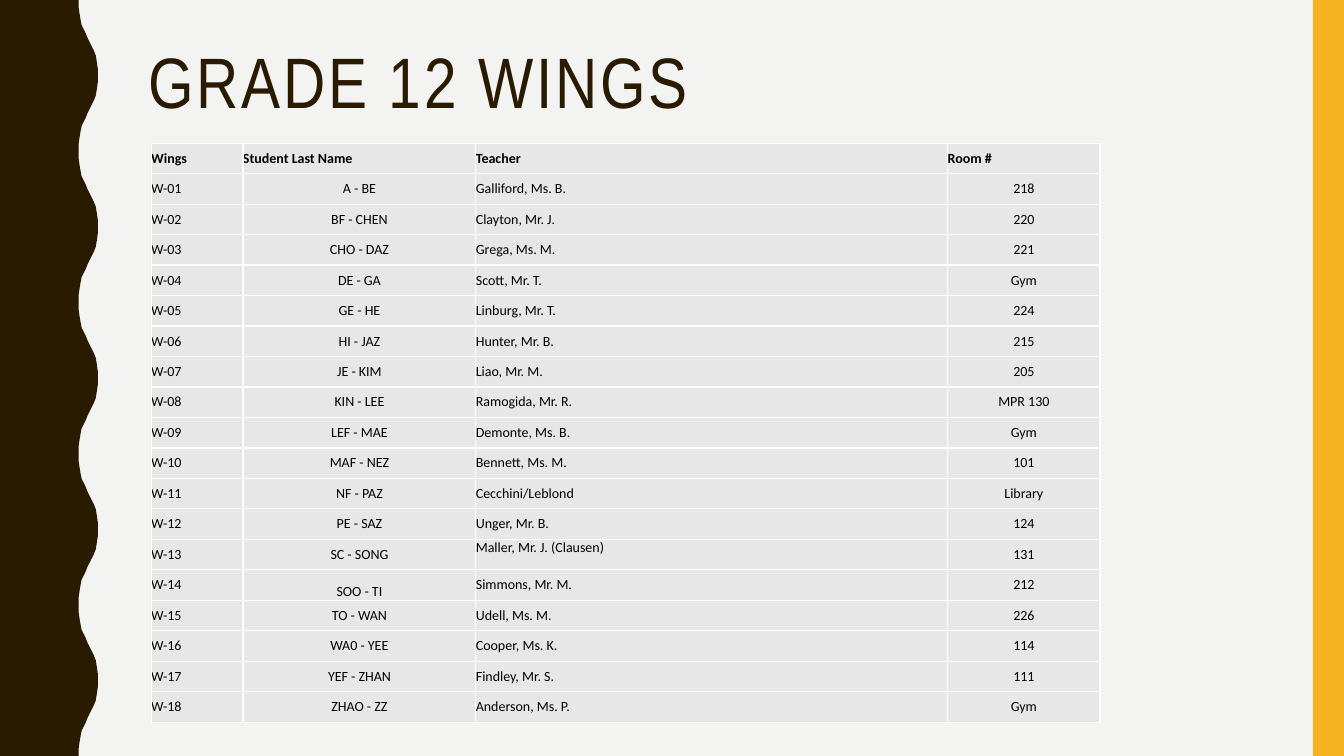
from dataclasses import dataclass

from lxml import etree
from pptx import Presentation
from pptx.dml.color import RGBColor
from pptx.enum.shapes import MSO_SHAPE
from pptx.enum.text import MSO_ANCHOR, PP_ALIGN
from pptx.oxml.ns import qn
from pptx.util import Inches, Pt

RECTANGLE = MSO_SHAPE.RECTANGLE
TOP, MIDDLE, BOTTOM = MSO_ANCHOR.TOP, MSO_ANCHOR.MIDDLE, MSO_ANCHOR.BOTTOM
LEFT, CENTER = PP_ALIGN.LEFT, PP_ALIGN.CENTER


@dataclass(frozen=True)
class Theme:
    background: str = "F3F3F2"
    dark: str = "2A1A00"
    accent: str = "F8B323"
    cell: str = "E7E7E7"
    border: str = "FFFFFF"
    text: str = "000000"
    title_font: str = "Arial Narrow"
    table_font: str = "Calibri"
    title_size: int = 51
    table_size: int = 10
    border_width: int = 1


THEME = Theme()
SLIDE_WIDTH, SLIDE_HEIGHT = 13.33, 7.5

# Half a wave, trough to crest; the other half mirrors it.
HALF_WAVE = [
    (0.78, 0), (0.78, 0.07), (0.79, 0.14), (0.8, 0.2), (0.81, 0.25),
    (0.83, 0.29), (0.85, 0.33), (0.87, 0.38), (0.89, 0.42), (0.91, 0.46),
    (0.93, 0.5), (0.95, 0.55), (0.96, 0.61), (0.97, 0.68), (0.97, 0.75),
]
WAVE_LENGTH = 1.5
WAVE_COUNT = 5

HEADINGS = ("Wings", "Student Last Name", "Teacher", "Room #")
WINGS = [
    ("A - BE", "Galliford, Ms. B.", "218"),
    ("BF - CHEN", "Clayton, Mr. J.", "220"),
    ("CHO - DAZ", "Grega, Ms. M.", "221"),
    ("DE - GA", "Scott, Mr. T.", "Gym"),
    ("GE - HE", "Linburg, Mr. T.", "224"),
    ("HI - JAZ", "Hunter, Mr. B.", "215"),
    ("JE - KIM", "Liao, Mr. M.", "205"),
    ("KIN - LEE", "Ramogida, Mr. R.", "MPR 130"),
    ("LEF - MAE", "Demonte, Ms. B.", "Gym"),
    ("MAF - NEZ", "Bennett, Ms. M.", "101"),
    ("NF - PAZ", "Cecchini/Leblond", "Library"),
    ("PE - SAZ", "Unger, Mr. B.", "124"),
    ("SC - SONG", "Maller, Mr. J. (Clausen)", "131"),
    ("SOO - TI", "Simmons, Mr. M.", "212"),
    ("TO - WAN", "Udell, Ms. M.", "226"),
    ("WA0 - YEE", "Cooper, Ms. K.", "114"),
    ("YEF - ZHAN", "Findley, Mr. S.", "111"),
    ("ZHAO - ZZ", "Anderson, Ms. P.", "Gym"),
]
COLUMN_WIDTHS = (0.91, 2.31, 4.68, 1.51)
COLUMN_ALIGNMENTS = (LEFT, CENTER, LEFT, CENTER)
TABLE_HEIGHT = 5.75
SPECIAL_ANCHORS = {(13, 2): TOP, (14, 1): BOTTOM}


def paint(shape, color):
    shape.shadow.inherit = False
    shape.fill.solid()
    shape.fill.fore_color.rgb = RGBColor.from_string(color)
    shape.line.fill.background()


def style_font(font, color, **format_values):
    font.color.rgb = RGBColor.from_string(color)
    for name, value in format_values.items():
        setattr(font, name, value)


def add_wavy_band(slide):
    mirrored = [(x, WAVE_LENGTH - y) for x, y in HALF_WAVE[-2::-1]]
    wave = HALF_WAVE + mirrored[:-1]
    edge = [(x, y + number * WAVE_LENGTH)
            for number in range(WAVE_COUNT) for x, y in wave]
    outline = edge + [(HALF_WAVE[0][0], SLIDE_HEIGHT), (0, SLIDE_HEIGHT)]
    builder = slide.shapes.build_freeform(0, 0)
    builder.add_line_segments([(Inches(x), Inches(y)) for x, y in outline])
    paint(builder.convert_to_shape(), THEME.dark)


def add_side_bar(slide):
    bar = slide.shapes.add_shape(
        RECTANGLE, Inches(13.02), 0, Inches(0.31), Inches(SLIDE_HEIGHT))
    paint(bar, THEME.accent)


def add_title(slide, wording):
    title = slide.shapes.add_textbox(
        Inches(1.37), Inches(0.42), Inches(11.13), Inches(1.63))
    title.text_frame.word_wrap = True
    title.text_frame.vertical_anchor = TOP
    paragraph = title.text_frame.paragraphs[0]
    paragraph.line_spacing = 0.9
    run = paragraph.add_run()
    run.text = wording
    style_font(run.font, THEME.dark, name=THEME.title_font,
               size=Pt(THEME.title_size))
    run.font._element.set("spc", "200")


def add_borders(cell):
    properties = cell._tc.get_or_add_tcPr()
    for side in ("lnL", "lnR", "lnT", "lnB"):
        line = etree.SubElement(properties, qn(f"a:{side}"),
                                w=str(Pt(THEME.border_width)))
        fill = etree.SubElement(line, qn("a:solidFill"))
        etree.SubElement(fill, qn("a:srgbClr"), val=THEME.border)


def fill_cell(cell, wording, alignment, anchor, bold):
    add_borders(cell)
    cell.fill.solid()
    cell.fill.fore_color.rgb = RGBColor.from_string(THEME.cell)
    for side in ("left", "right", "top", "bottom"):
        setattr(cell, f"margin_{side}", 0)
    cell.vertical_anchor = anchor
    paragraph = cell.text_frame.paragraphs[0]
    paragraph.alignment = alignment
    run = paragraph.add_run()
    run.text = wording
    style_font(run.font, THEME.text, name=THEME.table_font,
               size=Pt(THEME.table_size), bold=bold)


def add_wings_table(slide):
    rows = [HEADINGS] + [(f"W-{number:02}", *wing)
                         for number, wing in enumerate(WINGS, start=1)]
    table = slide.shapes.add_table(
        len(rows), len(HEADINGS), Inches(1.5), Inches(1.42),
        Inches(sum(COLUMN_WIDTHS)), Inches(TABLE_HEIGHT)).table
    table.horz_banding = False
    for column, width in zip(table.columns, COLUMN_WIDTHS):
        column.width = Inches(width)
    for row_index, row in enumerate(rows):
        heading = row_index == 0
        table.rows[row_index].height = Inches(TABLE_HEIGHT / len(rows))
        for column_index, wording in enumerate(row):
            fill_cell(
                table.cell(row_index, column_index), wording,
                LEFT if heading else COLUMN_ALIGNMENTS[column_index],
                SPECIAL_ANCHORS.get((row_index, column_index), MIDDLE),
                heading)


def main():
    presentation = Presentation()
    presentation.slide_width = Inches(SLIDE_WIDTH)
    presentation.slide_height = Inches(SLIDE_HEIGHT)
    slide = presentation.slides.add_slide(presentation.slide_layouts[6])
    slide.background.fill.solid()
    slide.background.fill.fore_color.rgb = RGBColor.from_string(
        THEME.background)
    add_wavy_band(slide)
    add_side_bar(slide)
    add_title(slide, "GRADE 12 WINGS")
    add_wings_table(slide)
    presentation.save("out.pptx")


if __name__ == "__main__":
    main()
